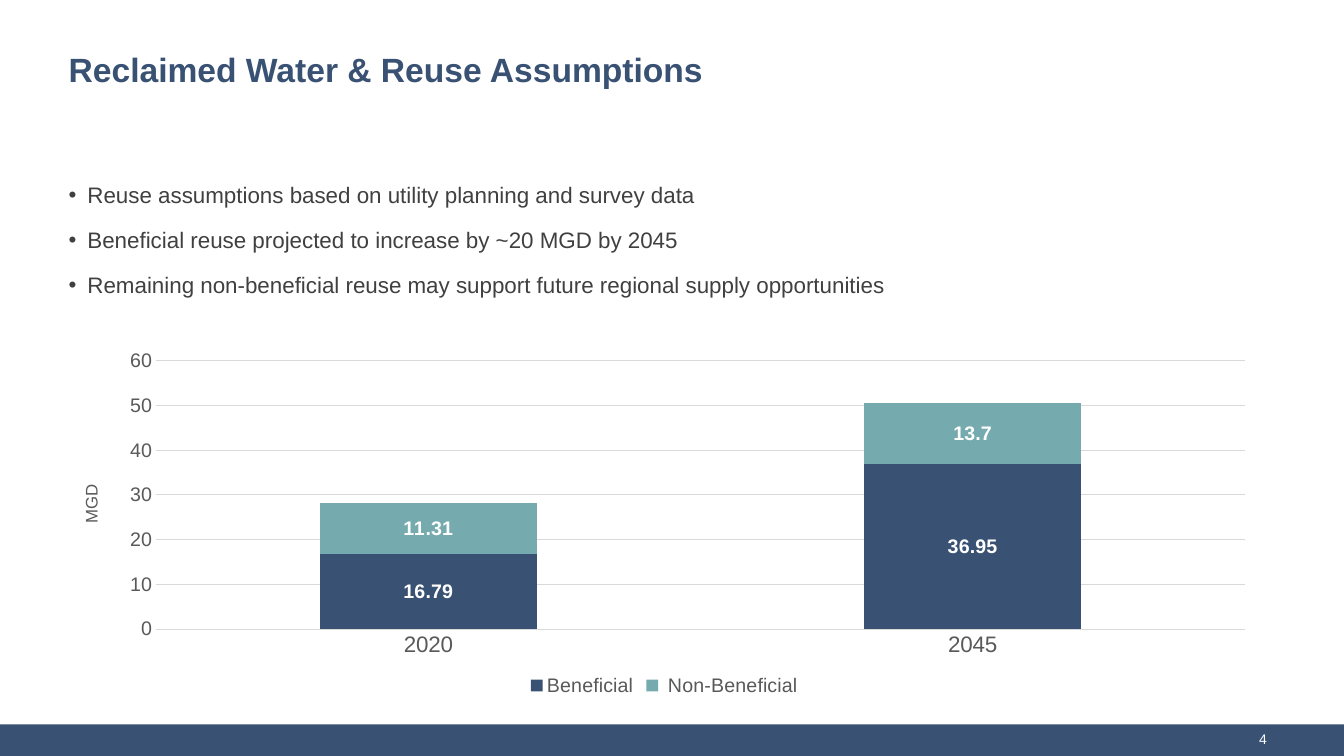
from lxml import etree
from pptx import Presentation
from pptx.chart.data import CategoryChartData
from pptx.dml.color import RGBColor
from pptx.enum.chart import XL_CHART_TYPE, XL_LABEL_POSITION, XL_LEGEND_POSITION, XL_TICK_MARK
from pptx.enum.shapes import MSO_SHAPE
from pptx.enum.text import MSO_ANCHOR, PP_ALIGN
from pptx.oxml import parse_xml
from pptx.oxml.ns import qn
from pptx.util import Pt

STACKED = XL_CHART_TYPE.COLUMN_STACKED
CENTER = XL_LABEL_POSITION.CENTER
BOTTOM = XL_LEGEND_POSITION.BOTTOM
NO_TICK = XL_TICK_MARK.NONE
RECTANGLE = MSO_SHAPE.RECTANGLE
TOP, MIDDLE = MSO_ANCHOR.TOP, MSO_ANCHOR.MIDDLE
LEFT, RIGHT = PP_ALIGN.LEFT, PP_ALIGN.RIGHT

FONT = "Arial"
COLORS = {"navy": "395173", "teal": "75AAAF", "body": "404040",
          "axis": "595959", "grid": "D9D9D9", "white": "FFFFFF"}
WIDTH, HEIGHT = 960, 540
MARGIN = 49
BULLET_INDENT = 13.5

prs = Presentation()
prs.slide_width, prs.slide_height = Pt(WIDTH), Pt(HEIGHT)
slide = prs.slides.add_slide(prs.slide_layouts[6])


def style_font(font, size, color, bold=False):
    font.name, font.size, font.bold = FONT, Pt(size), bold
    font.color.rgb = RGBColor.from_string(COLORS[color])


def add_text(*lines, box, size, color, bold=False, align=LEFT, anchor=MIDDLE,
             inset=0, bullet=None, gap=0):
    frame = slide.shapes.add_textbox(*map(Pt, box)).text_frame
    frame.word_wrap = True
    frame.vertical_anchor = anchor
    frame.margin_left = frame.margin_right = Pt(inset)
    for number, line in enumerate(lines):
        paragraph = frame.add_paragraph() if number else frame.paragraphs[0]
        paragraph.text = line
        paragraph.alignment = align
        if number:
            paragraph.space_before = Pt(gap)
        if bullet:
            properties = paragraph._p.get_or_add_pPr()
            properties.set("marL", str(Pt(BULLET_INDENT)))
            properties.set("indent", str(-Pt(BULLET_INDENT)))
            etree.SubElement(properties, qn("a:buFont")).set("typeface", FONT)
            etree.SubElement(properties, qn("a:buChar")).set("char", bullet)
        style_font(paragraph.runs[0].font, size, color, bold)


# Footer band and page number
footer = slide.shapes.add_shape(RECTANGLE, Pt(0), Pt(517.5), Pt(WIDTH), Pt(22.5))
footer.shadow.inherit = False
footer.fill.solid()
footer.fill.fore_color.rgb = RGBColor.from_string(COLORS["navy"])
footer.line.fill.background()
add_text("4", box=(708, 517.5, 204, 21), size=10, color="white", align=RIGHT, inset=7.2)

# Title and bullets
add_text("Reclaimed Water & Reuse Assumptions", box=(MARGIN, 27.5, 863, 43),
         size=24, color="navy", bold=True)
add_text("Reuse assumptions based on utility planning and survey data",
         "Beneficial reuse projected to increase by ~20 MGD by 2045",
         "Remaining non-beneficial reuse may support future regional supply opportunities",
         box=(MARGIN, 126, 864, 73), size=16, color="body", anchor=TOP, bullet="•", gap=13)

# Reuse chart
reuse = CategoryChartData()
reuse.categories = ["2020", "2045"]
reuse.add_series("Beneficial", (16.79, 36.95))
reuse.add_series(" Non-Beneficial", (11.31, 13.7))
chart = slide.shapes.add_chart(STACKED, Pt(42.5), Pt(245), Pt(864), Pt(255.5), reuse).chart
chart.has_title = False
style_font(chart.font, 14, "axis")
chart.has_legend = True
chart.legend.position = BOTTOM
chart.legend.include_in_layout = False
style_font(chart.legend.font, 14, "axis")

# Stacked columns with values
columns = chart.plots[0]
columns.gap_width, columns.overlap = 150, 100
columns.vary_by_categories = False
for series, color in zip(columns.series, ("navy", "teal")):
    series.format.fill.solid()
    series.format.fill.fore_color.rgb = RGBColor.from_string(COLORS[color])
    labels = series.data_labels
    labels.show_value = True
    labels.position = CENTER
    style_font(labels.font, 14, "white", bold=True)

# Axes
years, volumes = chart.category_axis, chart.value_axis
for axis, size in ((years, 16), (volumes, 14)):
    axis.major_tick_mark = axis.minor_tick_mark = NO_TICK
    style_font(axis.tick_labels.font, size, "axis")
volumes.minimum_scale, volumes.maximum_scale, volumes.major_unit = 0, 60, 10
volumes.has_major_gridlines = True
for line in (years.format.line, volumes.major_gridlines.format.line):
    line.color.rgb = RGBColor.from_string(COLORS["grid"])
    line.width = Pt(0.75)
volumes.format.line.fill.background()
unit = volumes.axis_title.text_frame
unit.text = "MGD"
style_font(unit.paragraphs[0].runs[0].font, 12, "axis")
unit._txBody.find(qn("a:bodyPr")).set("rot", "-5400000")
unit._txBody.find(qn("a:bodyPr")).set("vert", "horz")

# Plot area as fractions of the chart
plot_area = chart._chartSpace.chart.plotArea
for old_layout in plot_area.findall(qn("c:layout")):
    plot_area.remove(old_layout)
settings = {"layoutTarget": "inner", "xMode": "edge", "yMode": "edge",
            "x": 0.08, "y": 0.05, "w": 0.9, "h": 0.75}
layout = parse_xml('<c:layout xmlns:c="http://schemas.openxmlformats.org/drawingml/2006/chart">'
                   "<c:manualLayout/></c:layout>")
for key, value in settings.items():
    etree.SubElement(layout[0], qn(f"c:{key}")).set("val", str(value))
plot_area.insert(0, layout)

prs.save("out.pptx")
